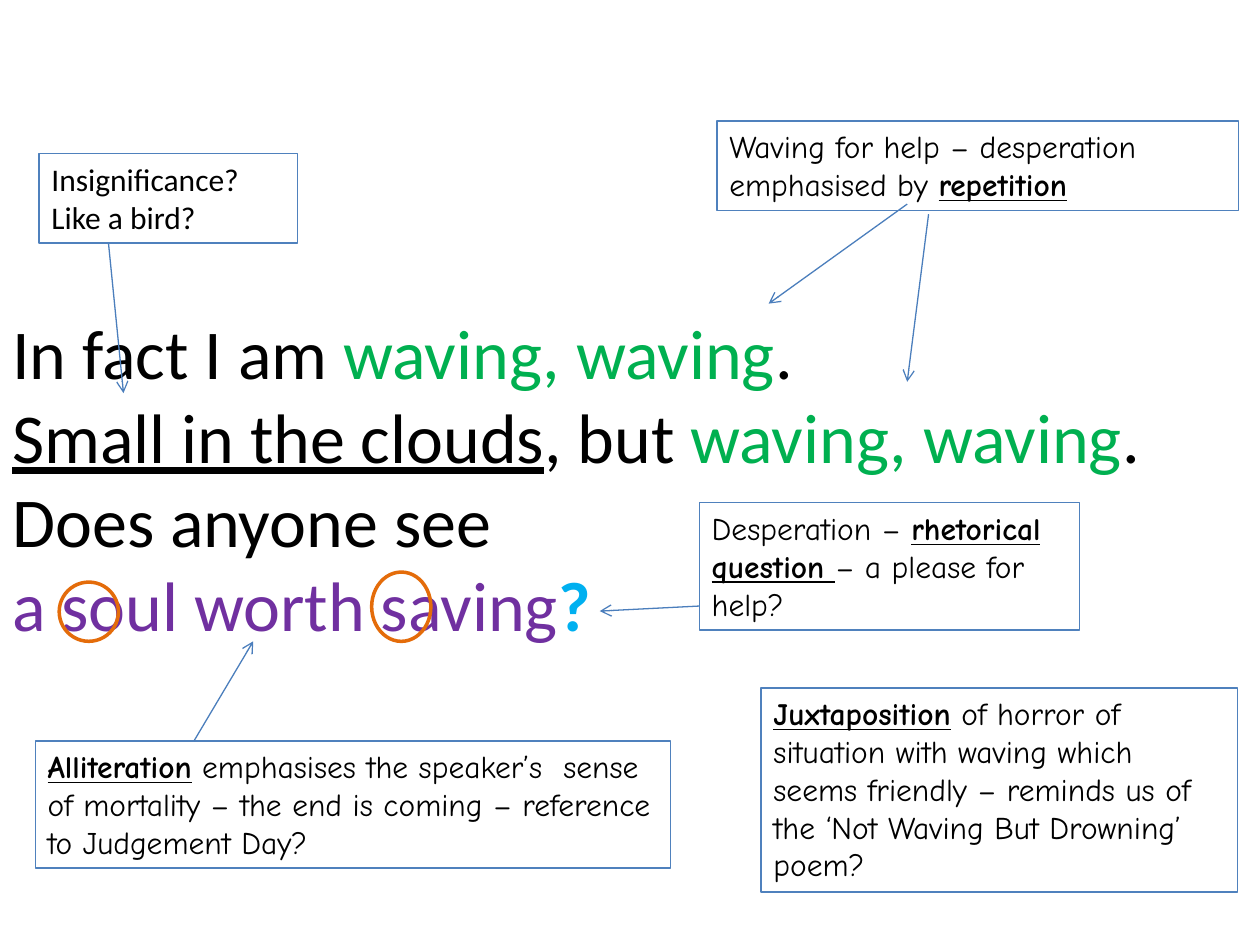
from lxml.etree import SubElement
from pptx import Presentation
from pptx.dml.color import RGBColor
from pptx.enum.shapes import MSO_CONNECTOR as Connector, MSO_SHAPE as Shape
from pptx.enum.text import MSO_ANCHOR as Anchor, PP_ALIGN as Align
from pptx.oxml.ns import qn
from pptx.util import Inches, Pt

COLORS = {
    "ink": "000000", "paper": "FFFFFF", "border": "4F81BD", "arrow": "4B7EBC",
    "ring": "E46C0A", "waving": "00B050", "soul": "7030A0", "question": "00B0F0",
}
HAND, PLAIN = "Comic Neue", "Calibri"
COLUMNS, ROWS = 100, 75


def rgb(name):
    return RGBColor.from_string(COLORS[name])


class PoemSlide:
    """Places elements on a grid of 100 columns by 75 rows."""

    def __init__(self, deck):
        self.shapes = deck.slides.add_slide(deck.slide_layouts[6]).shapes
        self.column = deck.slide_width / COLUMNS
        self.row = deck.slide_height / ROWS

    def place(self, *lengths):
        """Turn alternating columns and rows into slide units."""
        return [round(n * (self.row if i % 2 else self.column))
                for i, n in enumerate(lengths)]

    def set_lines(self, frame, lines, font, size):
        """Each line is a list of (text, colour, marks); marks hold b and u."""
        frame.word_wrap = True
        frame.vertical_anchor = Anchor.TOP
        for i, line in enumerate(lines):
            paragraph = frame.add_paragraph() if i else frame.paragraphs[0]
            paragraph.alignment = Align.LEFT
            paragraph.font.name, paragraph.font.size = font, Pt(size)
            for text, color, marks in line:
                run = paragraph.add_run()
                run.text = text
                run.font.color.rgb = rgb(color)
                if "b" in marks:
                    run.font.bold = True
                if "u" in marks:
                    run.font.underline = True

    def poem(self, at, lines):
        box = self.shapes.add_textbox(*self.place(*at))
        self.set_lines(box.text_frame, lines, PLAIN, 40)

    def outline(self, kind, at, color, width, filled=False):
        shape = self.shapes.add_shape(kind, *self.place(*at))
        shape.shadow.inherit = False
        if filled:
            shape.fill.solid()
            shape.fill.fore_color.rgb = rgb("paper")
        else:
            shape.fill.background()
        shape.line.color.rgb = rgb(color)
        shape.line.width = Pt(width)
        return shape

    def note(self, at, *parts, font=HAND, filled=False):
        """Parts alternate between plain text and bold underlined terms."""
        box = self.outline(Shape.RECTANGLE, at, "border", 0.75, filled)
        line = [(text, "ink", "bu" if i % 2 else "")
                for i, text in enumerate(parts) if text]
        self.set_lines(box.text_frame, [line], font, 18)

    def ring(self, at):
        self.outline(Shape.OVAL, at, "ring", 2)

    def arrow(self, start, end):
        connector = self.shapes.add_connector(
            Connector.STRAIGHT, *self.place(*start, *end))
        connector.line.color.rgb = rgb("arrow")
        connector.line.width = Pt(0.75)
        properties = connector._element.spPr
        SubElement(properties.find(qn("a:ln")), qn("a:tailEnd"), type="arrow")
        SubElement(properties, qn("a:effectLst"))


def main():
    deck = Presentation()
    deck.slide_width, deck.slide_height = Inches(10), Inches(7.5)
    slide = PoemSlide(deck)

    waving = ("waving, waving", "waving", "")
    stop = (".", "ink", "")
    slide.poem((0, 24.1, 100, 27.9), [
        [("In fact I am ", "ink", ""), waving, stop],
        [("Small in the clouds", "ink", "u"), (", but ", "ink", ""), waving, stop],
        [("Does anyone see", "ink", "")],
        [("a soul worth saving", "soul", ""), ("?", "question", "b")],
    ])

    slide.note((56.9, 9.6, 41.4, 7.1),
               "Waving for help – desperation emphasised by ", "repetition")
    slide.note((2.8, 58.8, 50.4, 10.1), "", "Alliteration",
               " emphasises the speaker’s  sense of mortality – the end is "
               "coming – reference to Judgement Day?", filled=True)
    slide.note((60.4, 54.6, 37.8, 16.2), "", "Juxtaposition",
               " of horror of situation with waving which seems friendly – "
               "reminds us of the ‘Not Waving But Drowning’ poem?")
    slide.arrow((8.3, 16.2), (9.8, 31.2))
    slide.note((3.1, 12.2, 20.5, 7.1), "Insignificance?  Like a bird?",
               font=PLAIN, filled=True)
    slide.note((55.5, 39.9, 30.2, 10.1), "Desperation – ",
               "rhetorical question ", "– a please for help?")

    for at in ((4.7, 46.2, 4.7, 4.7), (29.5, 45.4, 4.7, 5.5)):
        slide.ring(at)
    for start, end in (
        ((72, 16.2), (61, 24.1)),
        ((73.7, 17), (72, 30.3)),
        ((15.4, 58.8), (20.1, 50.9)),
        ((55.5, 48.1), (47.6, 48.5)),
    ):
        slide.arrow(start, end)

    deck.save("out.pptx")


if __name__ == "__main__":
    main()
